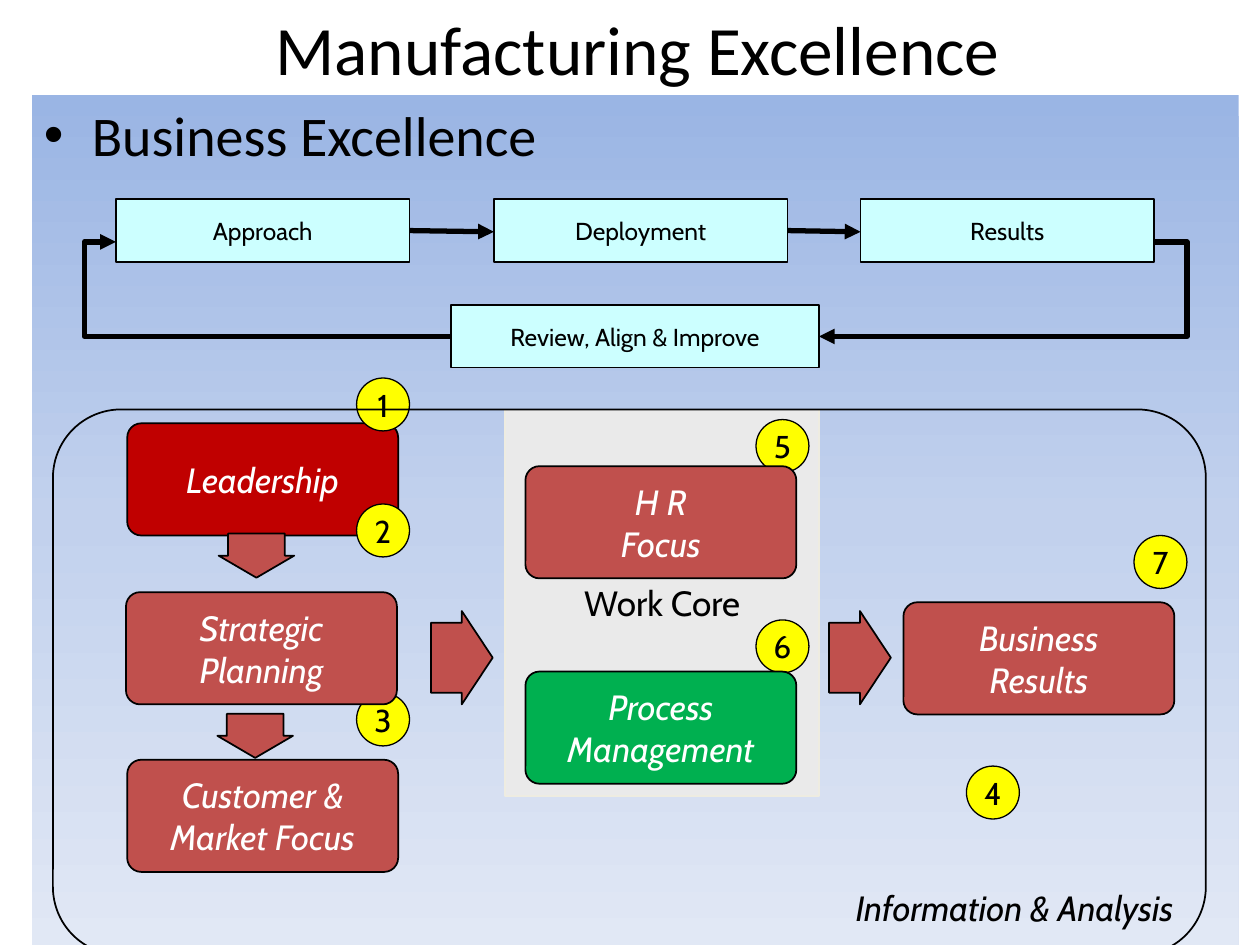
import copy

import lxml.etree
import pptx
import pptx.dml.color
import pptx.enum.shapes
import pptx.enum.text
import pptx.oxml.ns
import pptx.util
from pptx.util import Inches

RGBColor = pptx.dml.color.RGBColor
SHAPE = pptx.enum.shapes.MSO_SHAPE
CONNECTOR = pptx.enum.shapes.MSO_CONNECTOR
ALIGN = pptx.enum.text.PP_ALIGN
ANCHOR = pptx.enum.text.MSO_ANCHOR
qn = pptx.oxml.ns.qn

BLACK = RGBColor(0x00, 0x00, 0x00)
WHITE = RGBColor(0xFF, 0xFF, 0xFF)
CYAN = RGBColor(0xCC, 0xFF, 0xFF)
YELLOW = RGBColor(0xFF, 0xFF, 0x00)
BRICK = RGBColor(0xC0, 0x50, 0x4D)
RED = RGBColor(0xC0, 0x00, 0x00)
GREEN = RGBColor(0x00, 0xB0, 0x50)
GRAY = RGBColor(0xEA, 0xEA, 0xEA)
TAN = RGBColor(0xEE, 0xEC, 0xE1)
GRADIENT = (
    RGBColor(0x9A, 0xB5, 0xE4),
    RGBColor(0xC2, 0xD1, 0xED),
    RGBColor(0xE1, 0xE8, 0xF5),
)


def write_text(shape, lines, size, color=BLACK, font="Cabin", italic=False,
               align=ALIGN.CENTER, anchor=ANCHOR.MIDDLE, wrap=False):
    """Fill a shape with one paragraph per line."""
    frame = shape.text_frame
    frame.word_wrap = wrap
    frame.vertical_anchor = anchor
    for index, line in enumerate(lines):
        paragraph = frame.add_paragraph() if index else frame.paragraphs[0]
        paragraph.alignment = align
        run = paragraph.add_run()
        run.text = line
        run.font.size = pptx.util.Pt(size)
        run.font.name = font
        run.font.italic = italic
        run.font.color.rgb = color


def add_shape(slide, kind, left, top, width, height, fill, line=BLACK, weight=1):
    """Add a flat preset shape."""
    shape = slide.shapes.add_shape(
        kind, Inches(left), Inches(top), Inches(width), Inches(height))
    shape.shadow.inherit = False
    if fill is None:
        shape.fill.background()
    else:
        shape.fill.solid()
        shape.fill.fore_color.rgb = fill
    if line is None:
        shape.line.fill.background()
    else:
        shape.line.color.rgb = line
        shape.line.width = pptx.util.Pt(weight)
    return shape


def add_title(slide):
    """Add the slide title."""
    title = slide.shapes.add_textbox(Inches(0.5), 0, Inches(9), Inches(0.75))
    write_text(title, [" Manufacturing Excellence"], 39.6, font="Calibri", wrap=True)


def add_body(slide):
    """Add the gradient panel with its bullet."""
    panel = add_shape(slide, SHAPE.RECTANGLE, 0.25, 0.75, 9.58, 6.75, None, None)
    panel.fill.gradient()
    panel.fill.gradient_angle = 270
    stops = panel.element.spPr.find(".//" + qn("a:gsLst"))
    stops.insert(1, copy.deepcopy(stops[0]))
    for index, (stop, color) in enumerate(zip(panel.fill.gradient_stops, GRADIENT)):
        stop.position = index / 2
        stop.color.rgb = color
    write_text(panel, ["Business Excellence"], 32, font="Calibri",
               align=ALIGN.LEFT, anchor=ANCHOR.TOP, wrap=True)
    properties = panel.text_frame.paragraphs[0]._p.get_or_add_pPr()
    properties.set("marL", str(Inches(0.38)))
    properties.set("indent", str(Inches(-0.38)))
    font = lxml.etree.SubElement(properties, qn("a:buFont"))
    font.set("typeface", "Arial")
    bullet = lxml.etree.SubElement(properties, qn("a:buChar"))
    bullet.set("char", "•")


def add_step(slide, label, left, top, width=2.33):
    """Add a box of the review cycle."""
    step = add_shape(slide, SHAPE.RECTANGLE, left, top, width, 0.5, CYAN, weight=0.75)
    write_text(step, [label], 14)


def add_link(slide, start, end, bend=None):
    """Add an arrow, bent at a fraction of its width when bend is given."""
    kind = CONNECTOR.STRAIGHT if bend is None else CONNECTOR.ELBOW
    link = slide.shapes.add_connector(kind, *map(Inches, start + end))
    link.line.color.rgb = BLACK
    link.line.width = pptx.util.Pt(3)
    properties = link.element.spPr
    if bend is not None:
        guides = properties.find(qn("a:prstGeom")).get_or_add_avLst()
        guide = lxml.etree.SubElement(guides, qn("a:gd"))
        guide.set("name", "adj1")
        guide.set("fmla", f"val {round(bend * 100000)}")
    outline = link.line._get_or_add_ln()
    lxml.etree.SubElement(outline, qn("a:tailEnd")).set("type", "triangle")
    lxml.etree.SubElement(properties, qn("a:effectLst"))


def add_rounded(slide, left, top, width, height, fill):
    """Add a rounded rectangle."""
    shape = add_shape(slide, SHAPE.ROUNDED_RECTANGLE, left, top, width, height, fill)
    shape.adjustments[0] = 0.125
    return shape


def add_category(slide, lines, left, top, fill=BRICK):
    """Add a criteria category box."""
    category = add_rounded(slide, left, top, 2.15, 0.89, fill)
    write_text(category, lines, 20, WHITE, italic=True)


def add_block_arrow(slide, left, top, width, height, rotation=0):
    """Add a block arrow between categories."""
    arrow = add_shape(slide, SHAPE.RIGHT_ARROW, left, top, width, height, BRICK)
    arrow.adjustments[0] = 0.75
    arrow.adjustments[1] = 0.5
    arrow.rotation = rotation


def add_number(slide, number, left, top):
    """Add a numbered circle."""
    circle = add_shape(slide, SHAPE.OVAL, left, top, 0.42, 0.42, YELLOW, weight=0.75)
    write_text(circle, [number], 18)


def add_cycle(slide):
    """Add the review cycle."""
    for label, left in (("Approach", 0.92), ("Deployment", 3.92), ("Results", 6.83)):
        add_step(slide, label, left, 1.58)
    add_step(slide, "Review, Align & Improve", 3.58, 2.42, 2.92)
    add_link(slide, (3.25, 1.83), (3.92, 1.84))
    add_link(slide, (6.25, 1.83), (6.83, 1.84))
    add_link(slide, (9.17, 1.92), (6.5, 2.67), -0.094)
    add_link(slide, (3.58, 2.67), (0.92, 1.92), 1.094)


def add_model(slide):
    """Add the excellence model."""
    core = add_shape(slide, SHAPE.RECTANGLE, 4.01, 3.25, 2.49, 3.07, GRAY, TAN)
    write_text(core, ["Work Core"], 20)
    add_category(slide, ["Customer &", "Market Focus"], 1.01, 6.03)
    add_category(slide, ["Leadership"], 1.01, 3.36, RED)
    add_block_arrow(slide, 1.86, 4.11, 0.35, 0.6, 90)
    for number, left, top in (
        ("7", 9, 4.25), ("5", 6, 3.33), ("6", 6, 4.92), ("3", 2.83, 5.5),
        ("4", 7.67, 6.08), ("2", 2.83, 4), ("1", 2.83, 3),
    ):
        add_number(slide, number, left, top)
    frame = add_rounded(slide, 0.42, 3.25, 9.15, 4.33, None)
    write_text(frame, ["Information & Analysis"], 20, italic=True,
               align=ALIGN.RIGHT, anchor=ANCHOR.BOTTOM)
    add_category(slide, ["H R", "Focus"], 4.17, 3.7)
    add_category(slide, ["Strategic", "Planning"], 1, 4.7)
    add_category(slide, ["Business", "Results"], 7.17, 4.78)
    add_category(slide, ["Process", "Management"], 4.17, 5.33, GREEN)
    add_block_arrow(slide, 1.85, 5.54, 0.35, 0.6, 90)
    for left in (3.42, 6.58):
        add_block_arrow(slide, left, 4.85, 0.49, 0.74)


def main():
    """Build and save the slide."""
    presentation = pptx.Presentation()
    presentation.slide_width = Inches(10)
    presentation.slide_height = Inches(7.5)
    slide = presentation.slides.add_slide(presentation.slide_layouts[6])
    add_title(slide)
    add_body(slide)
    add_cycle(slide)
    add_model(slide)
    presentation.save("out.pptx")


if __name__ == "__main__":
    main()
